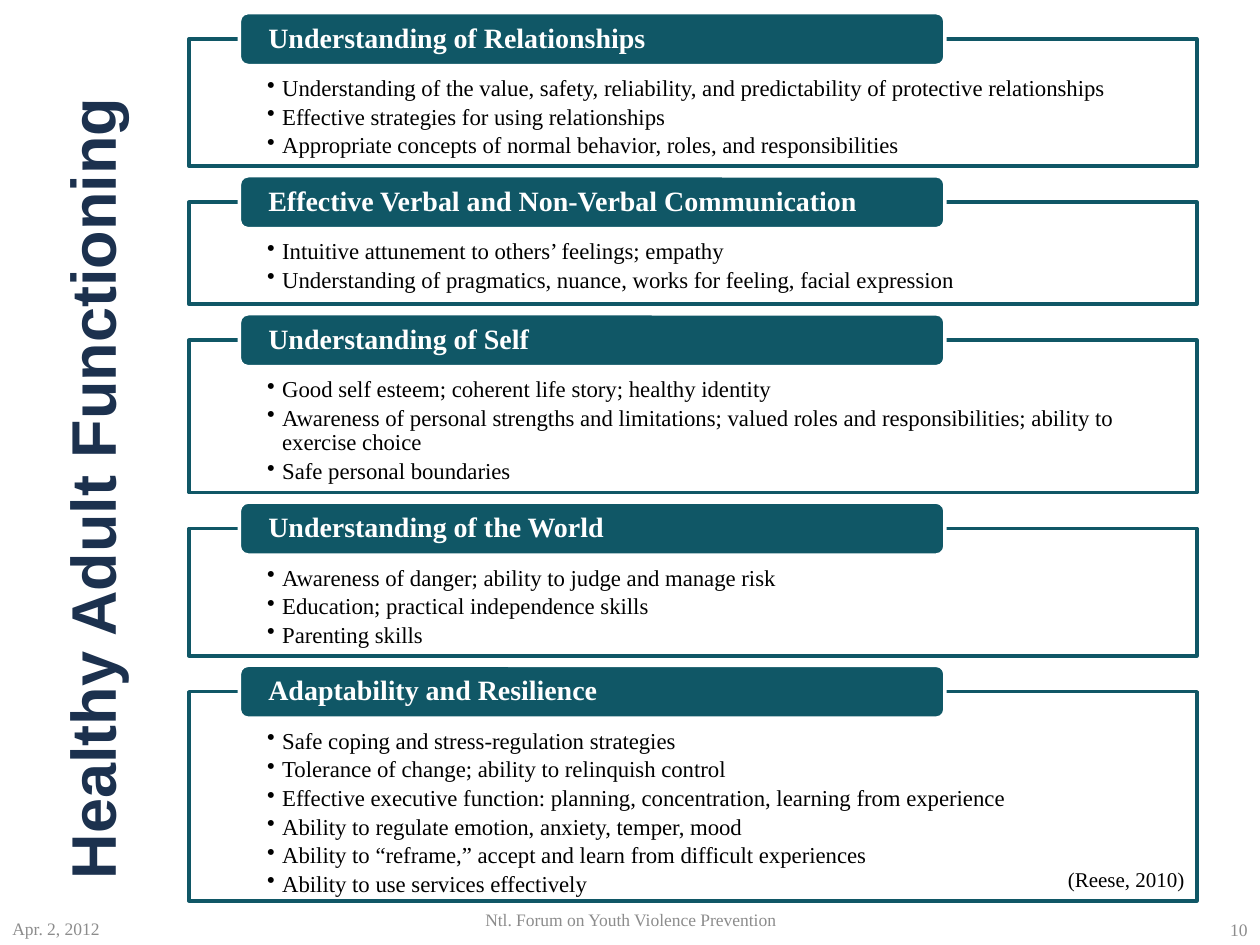
import pptx
import pptx.util
import pptx.dml.color
import pptx.enum.shapes
import pptx.enum.text
import pptx.oxml
import pptx.oxml.ns

Inches, Pt = pptx.util.Inches, pptx.util.Pt
RGBColor = pptx.dml.color.RGBColor
SHAPE = pptx.enum.shapes.MSO_SHAPE
ALIGN = pptx.enum.text.PP_ALIGN
ANCHOR = pptx.enum.text.MSO_ANCHOR
qn = pptx.oxml.ns.qn

# Content: heading, panel height, points
TITLE = "Healthy Adult Functioning"
SECTIONS = [
    ("Understanding of Relationships", 1.01, [
        "Understanding of the value, safety, reliability, and predictability of protective relationships",
        "Effective strategies for using relationships",
        "Appropriate concepts of normal behavior, roles, and responsibilities",
    ]),
    ("Effective Verbal and Non-Verbal Communication", 0.81, [
        "Intuitive attunement to others’ feelings; empathy",
        "Understanding of pragmatics, nuance, works for feeling, facial expression",
    ]),
    ("Understanding of Self", 1.21, [
        "Good self esteem; coherent life story; healthy identity",
        "Awareness of personal strengths and limitations; valued roles and responsibilities; "
        "ability to exercise choice",
        "Safe personal boundaries",
    ]),
    ("Understanding of the World", 1.01, [
        "Awareness of danger; ability to judge and manage risk",
        "Education; practical independence skills",
        "Parenting skills",
    ]),
    ("Adaptability and Resilience", 1.66, [
        "Safe coping and stress-regulation strategies",
        "Tolerance of change; ability to relinquish control",
        "Effective executive function: planning, concentration, learning from experience",
        "Ability to regulate emotion, anxiety, temper, mood",
        "Ability to “reframe,” accept and learn from difficult experiences",
        "Ability to use services effectively",
    ]),
]

TEAL = RGBColor(0x10, 0x57, 0x66)
NAVY = RGBColor(0x1C, 0x31, 0x4E)
GRAY = RGBColor(0x8C, 0x8C, 0x8C)
BLACK = RGBColor(0, 0, 0)
WHITE = RGBColor(0xFF, 0xFF, 0xFF)
SERIF = "Times New Roman"

# Text, box, size, colour, alignment, anchor
NOTES = [
    ("(Reese, 2010)", (8.33, 6.83, 1.17, 0.3), 12, BLACK, ALIGN.RIGHT, ANCHOR.TOP),
    ("Apr. 2, 2012", (0, 7.17, 2.33, 0.4), 10, GRAY, ALIGN.LEFT, ANCHOR.MIDDLE),
    ("Ntl. Forum on Youth Violence Prevention", (3.42, 7.1, 3.17, 0.4), 10, GRAY,
     ALIGN.CENTER, ANCHOR.MIDDLE),
    ("10", (7.67, 7.18, 2.33, 0.4), 10, GRAY, ALIGN.RIGHT, ANCHOR.MIDDLE),
]

# Panel grid: equal gaps between the first top and the last bottom
PANEL_LEFT, PANEL_WIDTH = 1.5, 8
PANELS_TOP, PANELS_BOTTOM = 0.31, 7.15
HEADING_LEFT, HEADING_WIDTH, HEADING_HEIGHT = 1.9, 5.6, 0.42
GAP = (PANELS_BOTTOM - PANELS_TOP - sum(height for _, height, _ in SECTIONS)) / (len(SECTIONS) - 1)


def add_run(paragraph, text, size, color, font=SERIF, bold=False):
    run = paragraph.add_run()
    run.text = text
    run.font.size = Pt(size)
    run.font.name = font
    run.font.bold = bold
    run.font.color.rgb = color


def set_frame(frame, anchor, insets=(0.1, 0.05, 0.1, 0.05)):
    frame.word_wrap = True
    frame.auto_size = pptx.enum.text.MSO_AUTO_SIZE.NONE
    frame.vertical_anchor = anchor
    (frame.margin_left, frame.margin_top,
     frame.margin_right, frame.margin_bottom) = map(Inches, insets)


def add_block(slide, kind, box, fill, line):
    block = slide.shapes.add_shape(kind, *map(Inches, box))
    block.shadow.inherit = False
    block.fill.solid()
    block.fill.fore_color.rgb = fill
    block.line.color.rgb = line
    block.line.width = Pt(2)
    return block


def set_bullet(paragraph):
    properties = paragraph._p.get_or_add_pPr()
    properties.set("marL", str(Inches(0.12)))
    properties.set("indent", str(Inches(-0.12)))
    bullet = pptx.oxml.parse_xml(
        '<a:buChar xmlns:a="http://schemas.openxmlformats.org/drawingml/2006/main" char="•"/>')
    properties.append(bullet)


def add_section(slide, top, heading, height, points):
    # Panel with its points
    panel = add_block(slide, SHAPE.RECTANGLE, (PANEL_LEFT, top, PANEL_WIDTH, height), WHITE, TEAL)
    fill_color = panel.fill._xPr.find(qn("a:solidFill"))[0]
    fill_color.append(fill_color.makeelement(qn("a:alpha"), {"val": "90000"}))
    frame = panel.text_frame
    set_frame(frame, ANCHOR.TOP, (0.62, 0.3, 0.62, 0.1))
    for index, point in enumerate(points):
        paragraph = frame.add_paragraph() if index else frame.paragraphs[0]
        paragraph.alignment = ALIGN.LEFT
        paragraph.line_spacing = 0.9
        paragraph.space_after = Pt(2.3)
        set_bullet(paragraph)
        add_run(paragraph, point, 13, BLACK)

    # Heading centred on the panel's top edge
    tab = add_block(slide, SHAPE.ROUNDED_RECTANGLE,
                    (HEADING_LEFT, top - HEADING_HEIGHT / 2, HEADING_WIDTH, HEADING_HEIGHT),
                    TEAL, WHITE)
    set_frame(tab.text_frame, ANCHOR.MIDDLE, (0.21, 0, 0.21, 0))
    paragraph = tab.text_frame.paragraphs[0]
    paragraph.alignment = ALIGN.LEFT
    paragraph.line_spacing = 0.9
    add_run(paragraph, heading, 16, WHITE, bold=True)


def main():
    deck = pptx.Presentation()
    deck.slide_width, deck.slide_height = Inches(10), Inches(7.5)
    slide = deck.slides.add_slide(deck.slide_layouts.get_by_name("Title Only"))

    # Vertical title
    title = slide.shapes.title
    title.left, title.top, title.width, title.height = map(Inches, (-2.57, 3.4, 6.58, 0.78))
    title.rotation = 270
    set_frame(title.text_frame, ANCHOR.MIDDLE)
    paragraph = title.text_frame.paragraphs[0]
    paragraph.alignment = ALIGN.LEFT
    add_run(paragraph, TITLE, 36, NAVY, "Arial", True)

    # Sections, stacked downwards
    top = PANELS_TOP
    for heading, height, points in SECTIONS:
        add_section(slide, top, heading, height, points)
        top += height + GAP

    # Citation and footer
    for text, box, size, color, alignment, anchor in NOTES:
        note = slide.shapes.add_textbox(*map(Inches, box))
        set_frame(note.text_frame, anchor)
        paragraph = note.text_frame.paragraphs[0]
        paragraph.alignment = alignment
        add_run(paragraph, text, size, color)

    deck.save("out.pptx")


if __name__ == "__main__":
    main()
